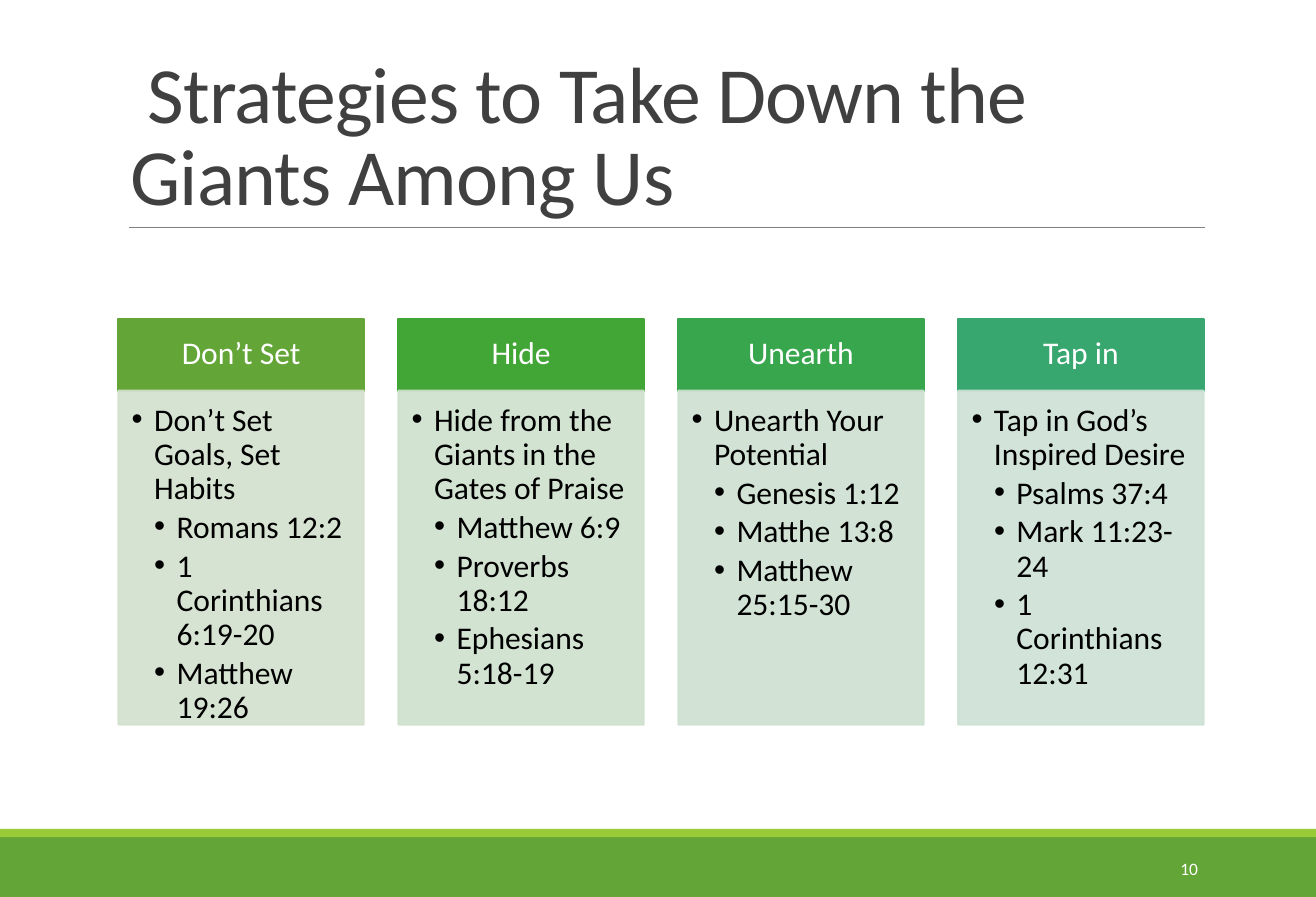
from lxml.etree import SubElement
from pptx import Presentation
from pptx.dml.color import RGBColor
from pptx.enum.shapes import MSO_CONNECTOR, MSO_SHAPE
from pptx.enum.text import MSO_ANCHOR as ANCHOR, MSO_AUTO_SIZE, PP_ALIGN as ALIGN
from pptx.oxml.ns import qn
from pptx.util import Pt

FONT = "Calibri"
WIDTH, HEIGHT = 792, 540
HEADER_HEIGHT = 43.2
COLUMN_GAP = 20.88
INDENT = 13.5
STRATEGIES = [
    ("Don’t Set", "63A537", "D3E1CE", "Don’t Set Goals, Set Habits",
     ["Romans 12:2", "1 Corinthians 6:19-20", "Matthew 19:26"]),
    ("Hide", "42A637", "CFE1CE", "Hide from the Giants in the Gates of Praise",
     ["Matthew 6:9", "Proverbs 18:12", "Ephesians 5:18-19"]),
    ("Unearth", "37A64D", "CEE1D1", "Unearth Your Potential",
     ["Genesis 1:12", "Matthe 13:8", "Matthew 25:15-30"]),
    ("Tap in", "37A76F", "CEE1D5", "Tap in God’s Inspired Desire",
     ["Psalms 37:4", "Mark 11:23-24", "1 Corinthians 12:31"]),
]


def rgb(code):
    return RGBColor.from_string(code)


def set_frame(frame, anchor, insets=(7.2, 3.6, 7.2, 3.6)):
    frame.word_wrap = True
    frame.auto_size = MSO_AUTO_SIZE.NONE
    frame.vertical_anchor = anchor
    (frame.margin_left, frame.margin_top,
     frame.margin_right, frame.margin_bottom) = map(Pt, insets)


def write(paragraph, text, size=19, color="000000", align=ALIGN.LEFT,
          line_spacing=0.9, after=0, spacing=None, bullet_level=None):
    paragraph.alignment = align
    paragraph.line_spacing = line_spacing
    paragraph.space_before, paragraph.space_after = Pt(0), Pt(after)
    run = paragraph.add_run()
    run.text = text
    run.font.name, run.font.size = FONT, Pt(size)
    run.font.color.rgb = rgb(color)
    if spacing is not None:
        run.font._element.set("spc", str(int(spacing * 100)))
    if bullet_level is not None:
        paragraph.level = bullet_level
        properties = paragraph._p.get_or_add_pPr()
        properties.set("marL", str(Pt(INDENT * (bullet_level + 1))))
        properties.set("indent", str(-Pt(INDENT)))
        SubElement(properties, qn("a:buFont"), typeface="Arial")
        SubElement(properties, qn("a:buChar"), char="•")


def add_box(slide, left, top, width, height, color, line_width=None, opacity=None):
    box = slide.shapes.add_shape(
        MSO_SHAPE.RECTANGLE, Pt(left), Pt(top), Pt(width), Pt(height))
    box.shadow.inherit = False
    box.fill.solid()
    box.fill.fore_color.rgb = rgb(color)
    if line_width:
        box.line.width = Pt(line_width)
        box.line.color.rgb = rgb(color)
    else:
        box.line.fill.background()
    if opacity:
        for color_node in box._element.spPr.iter(qn("a:srgbClr")):
            SubElement(color_node, qn("a:alpha"), val=str(opacity * 1000))
    return box


def add_title(slide, left, top, width, height):
    title = slide.shapes.title
    title.left, title.top, title.width, title.height = map(
        Pt, (left, top, width, height))
    set_frame(title.text_frame, ANCHOR.BOTTOM)
    write(title.text_frame.paragraphs[0],
          " Strategies to Take Down the Giants Among Us",
          size=48, color="404040", line_spacing=0.85, spacing=-0.5)
    bottom = top + height
    rule = slide.shapes.add_connector(
        MSO_CONNECTOR.STRAIGHT, Pt(left + 6.5), Pt(bottom),
        Pt(left + width + 0.7), Pt(bottom))
    rule.line.color.rgb = rgb("808080")
    rule.line.width = Pt(0.5)
    SubElement(rule._element.spPr, qn("a:effectLst"))


def add_footer(slide, left, top, width, height):
    add_box(slide, left, top, width, height, "63A537")
    add_box(slide, left, top - 5, width, 5, "99CB38")
    number = slide.shapes.add_textbox(
        Pt(left + 643), Pt(top + 4.3), Pt(85), Pt(28.8))
    set_frame(number.text_frame, ANCHOR.MIDDLE)
    write(number.text_frame.paragraphs[0], "10", size=10.5, color="FFFFFF",
          align=ALIGN.RIGHT, line_spacing=1.0, after=6)


def add_strategy(slide, left, top, width, height, strategy):
    heading, header_color, body_color, advice, verses = strategy
    header = add_box(slide, left, top, width, HEADER_HEIGHT, header_color, 1.25)
    set_frame(header.text_frame, ANCHOR.MIDDLE, (10.8, 5.8, 10.8, 5.8))
    write(header.text_frame.paragraphs[0], heading, color="FFFFFF",
          align=ALIGN.CENTER)

    body = add_box(slide, left, top + HEADER_HEIGHT, width,
                   height - HEADER_HEIGHT, body_color, 1.25, opacity=90)
    frame = body.text_frame
    set_frame(frame, ANCHOR.TOP, (8, 8, 10.8, 12))
    write(frame.paragraphs[0], advice, after=2.85, bullet_level=0)
    for verse in verses:
        write(frame.add_paragraph(), verse, after=2.85, bullet_level=1)


def add_strategies(slide, left, top, width, height):
    count = len(STRATEGIES)
    column_width = (width - COLUMN_GAP * (count - 1)) / count
    for index, strategy in enumerate(STRATEGIES):
        column_left = left + index * (column_width + COLUMN_GAP)
        add_strategy(slide, column_left, top, column_width, height, strategy)


def main():
    deck = Presentation()
    deck.slide_width, deck.slide_height = Pt(WIDTH), Pt(HEIGHT)
    slide = deck.slides.add_slide(deck.slide_layouts.get_by_name("Title Only"))
    add_footer(slide, 0, 504, WIDTH, 36)
    add_title(slide, 71.3, 22.5, 653, 114.5)
    add_strategies(slide, 71.3, 192, 653, 244.3)
    deck.save("out.pptx")


if __name__ == "__main__":
    main()
